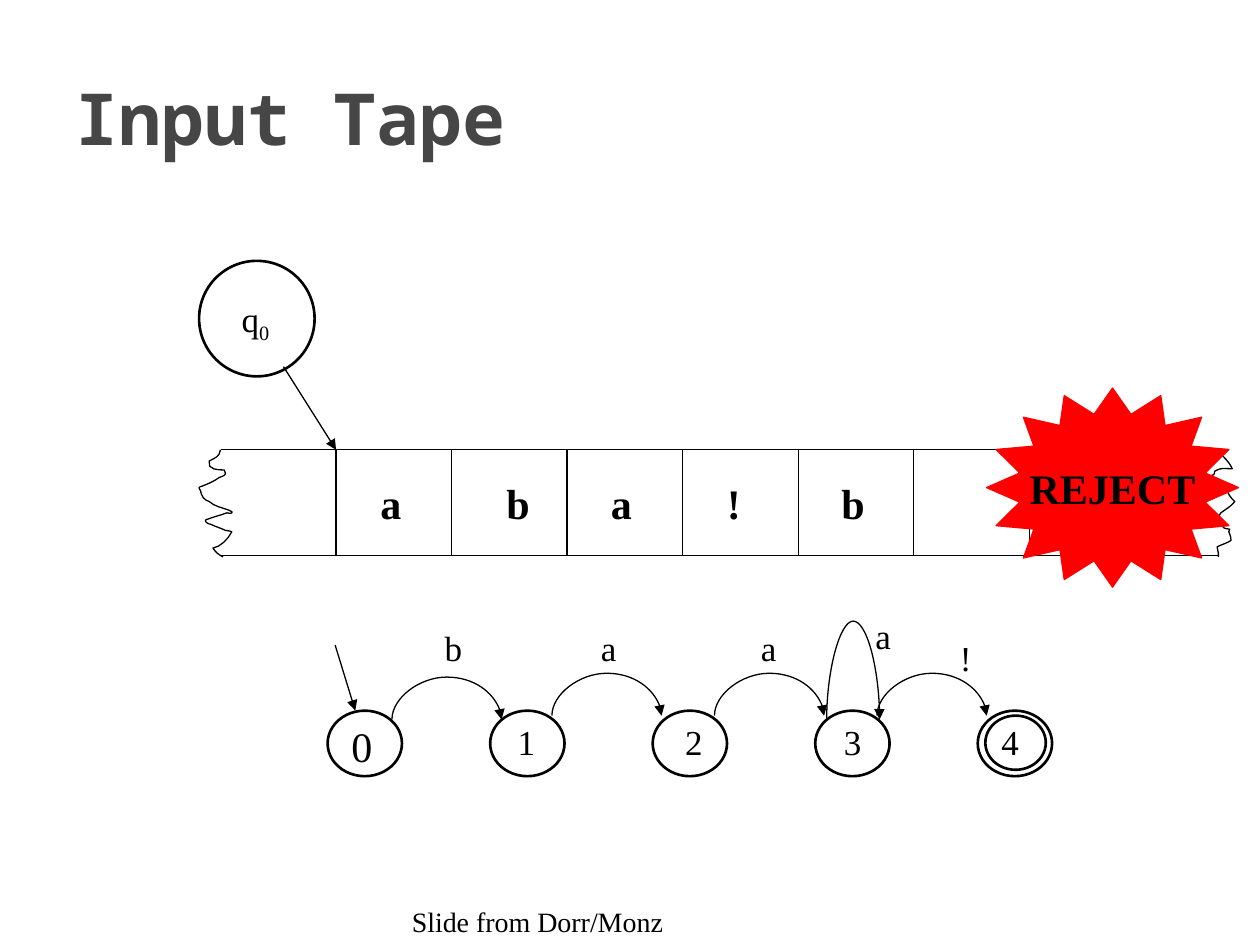
from dataclasses import dataclass

from pptx import Presentation
from pptx.dml.color import RGBColor
from pptx.enum.shapes import MSO_CONNECTOR as Conn, MSO_SHAPE as Geo
from pptx.enum.text import MSO_ANCHOR as Anchor, PP_ALIGN as Align
from pptx.oxml.ns import qn
from pptx.util import Emu, Inches, Pt
from lxml.etree import SubElement


@dataclass(frozen=True)
class Theme:
    """Colours, fonts, type sizes and line widths."""
    ink: RGBColor = RGBColor(0, 0, 0)
    title_ink: RGBColor = RGBColor(0x46, 0x46, 0x46)
    alert: RGBColor = RGBColor(0xFF, 0, 0)
    title_font: str = "Noto Sans Mono"
    body_font: str = "Times New Roman"
    title: float = 41
    large: float = 24
    label: float = 20
    credit: float = 16
    thin: float = 0.75
    thick: float = 1.5


T = Theme()
CELL = 0.917
TAPE_LEFT, TAPE_RIGHT, TAPE_TOP, TAPE_BOTTOM = 1.75, 9.67, 3.57, 4.41
STATE_LEFT, STATE_TOP, STATE_STEP = 2.6, 5.64, 1.29
STATE_W, STATE_H = 0.59, 0.52
HAIR = Emu(1588)

LEFT_EDGE = [
    (1.75, 3.57), (1.74, 3.63), (1.71, 3.63), (1.66, 3.66), (1.64, 3.73), (1.74, 3.73), (1.78, 3.73),
    (1.78, 3.74), (1.79, 3.75), (1.79, 3.76), (1.78, 3.78), (1.76, 3.78), (1.74, 3.79),
    (1.7, 3.82), (1.65, 3.84), (1.6, 3.86), (1.6, 3.86), (1.59, 3.86), (1.58, 3.87),
    (1.58, 3.88), (1.59, 3.89), (1.59, 3.89), (1.6, 3.94), (1.62, 3.97), (1.66, 3.98),
    (1.7, 4.02), (1.77, 4.03), (1.82, 4.05), (1.83, 4.06), (1.85, 4.06), (1.84, 4.07),
    (1.83, 4.08), (1.81, 4.07), (1.8, 4.07), (1.75, 4.09), (1.7, 4.1), (1.65, 4.12),
    (1.64, 4.12), (1.63, 4.13), (1.63, 4.13), (1.63, 4.15), (1.66, 4.16), (1.67, 4.16),
    (1.71, 4.18), (1.75, 4.19), (1.79, 4.21), (1.81, 4.21), (1.84, 4.22), (1.84, 4.22),
    (1.81, 4.28), (1.75, 4.34), (1.69, 4.35), (1.71, 4.38), (1.73, 4.4), (1.77, 4.42)]
RIGHT_EDGE = [
    (9.66, 3.57), (9.69, 3.61), (9.73, 3.64), (9.75, 3.67), (9.76, 3.68), (9.78, 3.72), (9.78, 3.72),
    (9.71, 3.72), (9.69, 3.71), (9.64, 3.74), (9.64, 3.75), (9.64, 3.76), (9.63, 3.77),
    (9.63, 3.77), (9.61, 3.77), (9.61, 3.78), (9.61, 3.8), (9.63, 3.8), (9.64, 3.81),
    (9.68, 3.85), (9.69, 3.85), (9.72, 3.87), (9.75, 3.91), (9.76, 3.95), (9.8, 3.98),
    (9.77, 4.02), (9.73, 4.04), (9.69, 4.07), (9.67, 4.1), (9.67, 4.09), (9.69, 4.13),
    (9.71, 4.2), (9.7, 4.19), (9.76, 4.2), (9.75, 4.23), (9.75, 4.21), (9.76, 4.24),
    (9.77, 4.26), (9.77, 4.29), (9.77, 4.29), (9.74, 4.31), (9.7, 4.32), (9.66, 4.34),
    (9.67, 4.4), (9.67, 4.37), (9.67, 4.42)]


def apply(obj, **values):
    """Set each named format value on an object."""
    for name, value in values.items():
        setattr(obj, name, value)


def place(sp, x, y, w, h):
    """Move and size a shape in inches."""
    apply(sp, left=Inches(x), top=Inches(y), width=Inches(w), height=Inches(h))


def write(p, text, size, bold=False, font=T.body_font, color=T.ink):
    """Add one formatted run to a paragraph."""
    r = p.add_run()
    r.text = text
    apply(r.font, size=Pt(size), bold=bold, name=font)
    r.font.color.rgb = color
    return r


def add_text(s, text, x, y, w, h, size=T.label, bold=False, wrap=True):
    """Add a one-line text box and return its paragraph."""
    tf = s.shapes.add_textbox(*map(Inches, (x, y, w, h))).text_frame
    tf.word_wrap = wrap
    p = tf.paragraphs[0]
    write(p, text, size, bold)
    return p


def stroke(line, width, color=T.ink):
    """Give a line its width and colour."""
    line.width = Pt(width)
    line.color.rgb = color


def add_line(s, x1, y1, x2, y2, arrow=False, kind=Conn.STRAIGHT):
    """Add a thin connector, with an arrowhead at its end if asked."""
    c = s.shapes.add_connector(kind, *map(Inches, (x1, y1, x2, y2)))
    stroke(c.line, T.thin)
    if arrow:
        SubElement(c.line._get_or_add_ln(), qn("a:tailEnd"), type="triangle")
    SubElement(c._element.spPr, qn("a:effectLst"))
    return c


def add_arc(s, x, y, span, rise):
    """Add an upward curved arrow from x to x + span."""
    c = add_line(s, x, y, x + span, y, True, Conn.CURVE)
    apply(c, left=Inches(x + span / 2), top=Inches(y - span / 2), width=HAIR, height=Inches(span))
    spPr = c._element.spPr
    xfrm = spPr.find(qn("a:xfrm"))
    xfrm.set("rot", "5400000")
    xfrm.set("flipV", "1")
    guides = spPr.find(qn("a:prstGeom")).get_or_add_avLst()
    bend = -round(Inches(rise) / HAIR * 100000)
    SubElement(guides, qn("a:gd"), name="adj1", fmla=f"val {bend}")


def add_ellipse(s, x, y, w, h):
    """Add an unfilled, thick-lined ellipse."""
    sp = s.shapes.add_shape(Geo.OVAL, *map(Inches, (x, y, w, h)))
    sp.shadow.inherit = False
    sp.fill.background()
    stroke(sp.line, T.thick)


def curve_points(knots, steps=4):
    """Sample a chain of cubic curves as drawing points."""
    points = []
    for i in range(0, len(knots) - 1, 3):
        for t in (n / steps for n in range(1, steps + 1)):
            weights = ((1 - t) ** 3, 3 * t * (1 - t) ** 2, 3 * t * t * (1 - t), t ** 3)
            points.append(tuple(Inches(sum(w * k[axis] for w, k in zip(weights, knots[i:i + 4])))
                                for axis in (0, 1)))
    return points


def add_torn_edge(s, knots):
    """Add the ragged end of the tape."""
    builder = s.shapes.build_freeform(*map(Inches, knots[0]))
    builder.add_line_segments(curve_points(knots), close=False)
    sp = builder.convert_to_shape()
    sp.shadow.inherit = False
    sp.fill.background()
    stroke(sp.line, T.thin)


def add_title(s, text):
    """Format and fill the title placeholder."""
    place(s.shapes.title, 0.5, 0.3, 9, 1.25)
    tf = s.shapes.title.text_frame
    apply(tf, vertical_anchor=Anchor.MIDDLE, word_wrap=True)
    tf.paragraphs[0].alignment = Align.LEFT
    write(tf.paragraphs[0], text, T.title, True, T.title_font, T.title_ink)


def add_tape(s):
    """Draw the tape, its symbols and the reading head."""
    for y in (TAPE_TOP, TAPE_BOTTOM):
        add_line(s, TAPE_LEFT, y, TAPE_RIGHT, y)
    for col in range(1, 9):
        x = TAPE_LEFT + col * CELL
        add_line(s, x, TAPE_TOP, x, TAPE_BOTTOM)
    for knots in (LEFT_EDGE, RIGHT_EDGE):
        add_torn_edge(s, knots)
    for symbol, x in zip("aba!b", (2.92, 3.92, 4.75, 5.67, 6.58)):
        add_text(s, symbol, x, 3.74, 0.4, 0.5, T.large, True)
    add_line(s, 2.25, 2.91, TAPE_LEFT + CELL, TAPE_TOP, True)
    add_ellipse(s, 1.58, 2.07, CELL, CELL)
    p = add_text(s, "q", 1.82, 2.31, 0.43, 0.43, wrap=False)
    write(p, "0", T.label).font._element.set("baseline", "-25000")


def add_automaton(s):
    """Draw the states and the labelled transitions."""
    for i, x in enumerate((2.69, 4.01, 5.34, 6.6, 7.85)):
        add_ellipse(s, STATE_LEFT + i * STATE_STEP, STATE_TOP, STATE_W, STATE_H)
        add_text(s, str(i), x, 5.67, 0.43, 0.43, T.label if i else T.large)
    add_ellipse(s, 7.82, 5.68, 0.48, 0.43)
    add_line(s, 2.66, 5.12, 2.82, STATE_TOP, True)
    for i in range(4):
        add_arc(s, 3.11 + i * STATE_STEP - (0.02 if i else 0), 5.68 if i else 5.71, 0.87, 0.37)
    add_arc(s, 6.56, 5.71, 0.42, 0.86)
    for symbol, x, y in (("b", 3.43, 4.92), ("a", 4.67, 4.92), ("a", 5.94, 4.92),
                         ("!", 7.52, 5), ("a", 6.85, 4.83)):
        add_text(s, symbol, x, y, 0.43, 0.43)


def add_verdict(s, text):
    """Add the starburst with the result."""
    sp = s.shapes.add_shape(Geo.STAR_16_POINT, *map(Inches, (7.83, 3.08, 2.02, 1.6)))
    place(sp, 7.83, 3.08, 2, 1.58)
    sp.adjustments[0] = 0.375
    sp.shadow.inherit = False
    sp.fill.solid()
    sp.fill.fore_color.rgb = T.alert
    stroke(sp.line, T.thin, T.alert)
    tf = sp.text_frame
    apply(tf, word_wrap=False, vertical_anchor=Anchor.MIDDLE)
    tf.paragraphs[0].alignment = Align.CENTER
    write(tf.paragraphs[0], text, T.large, True)


def main():
    """Build and save the slide."""
    prs = Presentation()
    apply(prs, slide_width=Inches(10), slide_height=Inches(7.5))
    s = prs.slides.add_slide(prs.slide_layouts[5])
    add_title(s, "Input Tape")
    add_tape(s)
    add_automaton(s)
    add_verdict(s, "REJECT")
    add_text(s, "Slide from Dorr/Monz", 3.17, 7.13, 2.2, 0.37, T.credit, wrap=False)
    prs.save("out.pptx")


if __name__ == "__main__":
    main()
